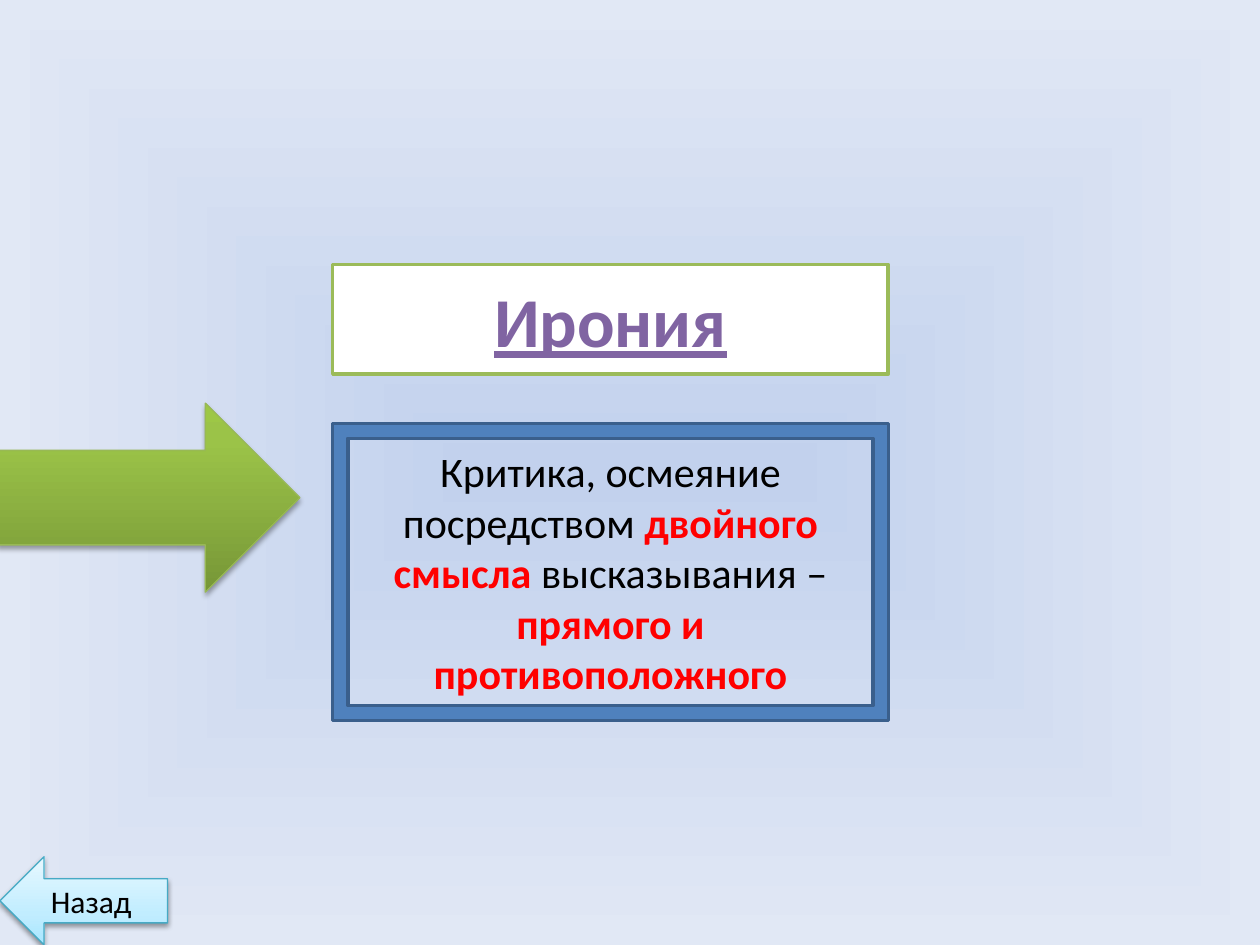
from lxml.etree import SubElement
from pptx import Presentation
from pptx.dml.color import RGBColor
from pptx.enum.shapes import MSO_SHAPE
from pptx.enum.text import MSO_ANCHOR, PP_ALIGN
from pptx.oxml.ns import qn
from pptx.util import Inches, Pt


def color(hex_text):
    return RGBColor.from_string(hex_text)


def set_gradient(fill, root, stops, angle=None):
    """Linear at the given angle, or rectangular from the centre without one."""
    fill.gradient()
    gradient = root.find(".//" + qn("a:gradFill"))
    for child in list(gradient):
        gradient.remove(child)
    stop_list = SubElement(gradient, qn("a:gsLst"))
    for position, hex_text in stops:
        stop = SubElement(stop_list, qn("a:gs"), pos=str(position * 1000))
        SubElement(stop, qn("a:srgbClr"), val=hex_text)
    if angle is None:
        path = SubElement(gradient, qn("a:path"), path="rect")
        SubElement(path, qn("a:fillToRect"), l="50000", t="50000", r="50000", b="50000")
    else:
        SubElement(gradient, qn("a:lin"), ang=str(angle * 60000), scaled="0")


def add_shadow(shape, opacity, distance):
    effects = shape._element.spPr.find(qn("a:effectLst"))
    shadow = SubElement(effects, qn("a:outerShdw"), blurRad=str(Pt(3.1)),
                        dist=str(Pt(distance)), dir="5400000", rotWithShape="0")
    black = SubElement(shadow, qn("a:srgbClr"), val="000000")
    SubElement(black, qn("a:alpha"), val=str(opacity * 1000))


def add_box(page, kind, box, line, width, fill=None):
    shape = page.shapes.add_shape(kind, *[Inches(length) for length in box])
    shape.shadow.inherit = False
    shape.line.color.rgb = color(line)
    shape.line.width = Pt(width)
    if fill:
        shape.fill.solid()
        shape.fill.fore_color.rgb = color(fill)
    return shape


def write(shape, size, spans):
    """Centre the spans, each given as (text, colour, bold, underline)."""
    frame = shape.text_frame
    frame.word_wrap = True
    frame.vertical_anchor = MSO_ANCHOR.MIDDLE
    para = frame.paragraphs[0]
    para.alignment = PP_ALIGN.CENTER
    for text, hex_text, bold, underline in spans:
        span = para.add_run()
        span.text = text
        font = span.font
        font.name, font.size = "Calibri", Pt(size)
        font.bold, font.underline = bold, underline
        font.color.rgb = color(hex_text)


def add_term(page, box):
    term = add_box(page, MSO_SHAPE.RECTANGLE, box, "9BBB59", 2, "FFFFFF")
    write(term, 40, [("Ирония", "8064A2", True, True)])


def add_definition(page, box):
    definition = add_box(page, MSO_SHAPE.FRAME, box, "3A5F8C", 2, "4F81BD")
    definition.adjustments[0] = 0.051
    write(definition, 24, [
        ("Критика, осмеяние посредством ", "000000", False, False),
        ("двойного смысла ", "FF0000", True, False),
        ("высказывания – ", "000000", False, False),
        ("прямого и противоположного", "FF0000", True, False),
    ])


def add_arrow(page, kind, box, line, stops, opacity, distance):
    arrow = add_box(page, kind, box, line, 0.75)
    set_gradient(arrow.fill, arrow._element, stops, 270)
    add_shadow(arrow, opacity, distance)
    return arrow


def add_pointer(page, box):
    add_arrow(page, MSO_SHAPE.RIGHT_ARROW, box, "98B955",
              [(0, "779737"), (80, "9BC348"), (100, "9DC746")], 35, 1.8)


def add_back_button(page, box):
    button = add_arrow(page, MSO_SHAPE.LEFT_ARROW, box, "46AAC5",
                       [(0, "A7E6FF"), (35, "C1EDFF"), (100, "E7F8FF")], 38, 1.6)
    write(button, 18, [("Назад ", "000000", False, False)])


def main():
    deck = Presentation()
    deck.slide_width, deck.slide_height = Inches(10), Inches(7.5)
    page = deck.slides.add_slide(deck.slide_layouts[6])
    set_gradient(page.background.fill, page._element, [(0, "C2D1ED"), (100, "E1E8F5")])
    add_term(page, (2.64, 2.1, 4.41, 0.87))
    add_definition(page, (2.64, 3.36, 4.41, 2.36))
    add_pointer(page, (-0.02, 3.2, 2.4, 1.5))
    add_back_button(page, (0, 6.8, 1.33, 0.7))
    deck.save("out.pptx")


if __name__ == "__main__":
    main()
